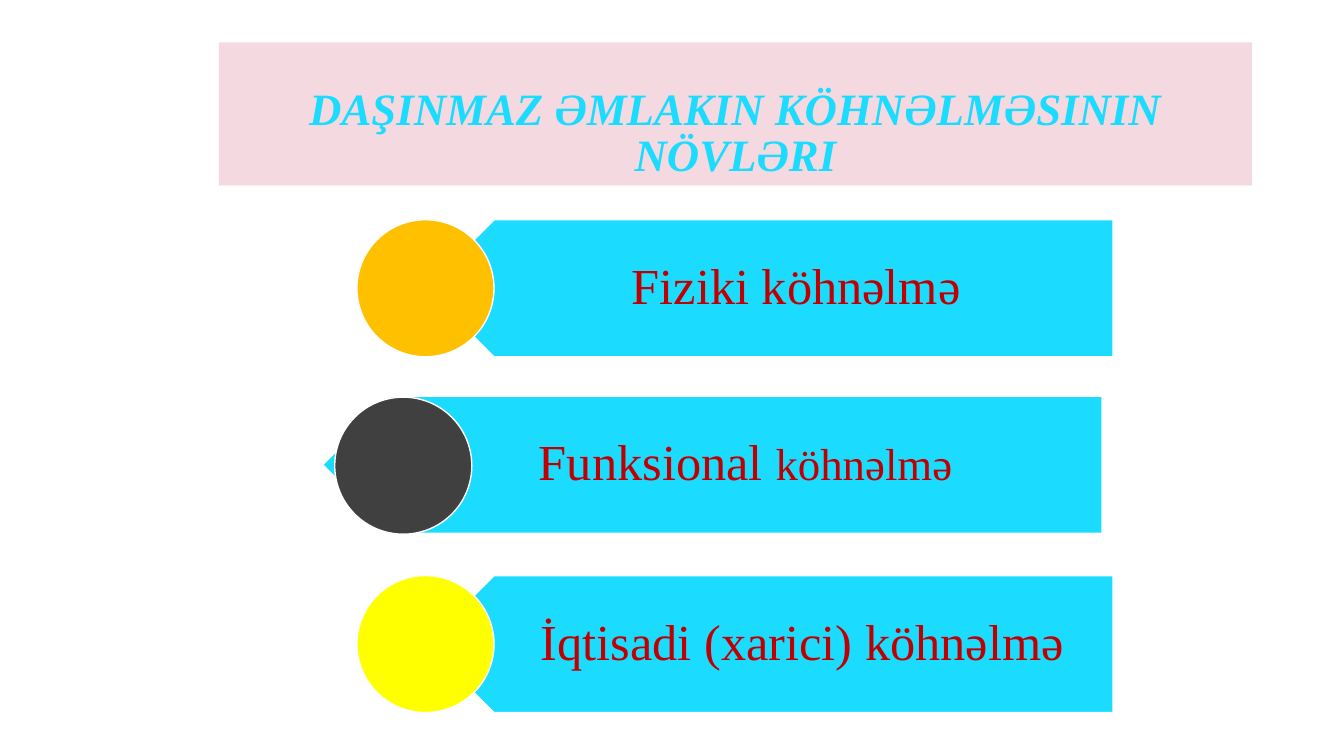
from pptx import Presentation
from pptx.dml.color import RGBColor
from pptx.enum.shapes import MSO_SHAPE
from pptx.enum.text import MSO_ANCHOR, PP_ALIGN
from pptx.util import Inches, Pt

PINK = RGBColor(0xF4, 0xD9, 0xE1)
CYAN = RGBColor(0x1B, 0xDC, 0xFF)
RED = RGBColor(0xC0, 0x00, 0x00)
WHITE = RGBColor(0xFF, 0xFF, 0xFF)
AMBER = RGBColor(0xFF, 0xC0, 0x00)
GREY = RGBColor(0x40, 0x40, 0x40)
YELLOW = RGBColor(0xFF, 0xFF, 0x00)
FONT = "Times New Roman"
ROW_HEIGHT = 1.36
TEXT_OFFSET = 0.34

prs = Presentation()
prs.slide_width = Inches(13.33)
prs.slide_height = Inches(7.5)
slide = prs.slides.add_slide(prs.slide_layouts[6])


def add_filled(kind, left, top, width, height, color):
    shape = slide.shapes.add_shape(
        kind, Inches(left), Inches(top), Inches(width), Inches(height))
    shape.shadow.inherit = False
    shape.fill.solid()
    shape.fill.fore_color.rgb = color
    shape.line.color.rgb = WHITE
    shape.line.width = Pt(1)
    return shape


def add_run(paragraph, text, size, color):
    run = paragraph.add_run()
    run.text = text
    run.font.name = FONT
    run.font.size = Pt(size)
    run.font.color.rgb = color
    return run


# Title band
title = add_filled(MSO_SHAPE.RECTANGLE, 2.17, 0.42, 10.25, 1.42, PINK)
title.line.fill.background()
title.text_frame.word_wrap = True
title.text_frame.vertical_anchor = MSO_ANCHOR.BOTTOM
heading = title.text_frame.paragraphs[0]
heading.alignment = PP_ALIGN.CENTER
heading.line_spacing = 0.85
heading_run = add_run(heading, "DAŞINMAZ ƏMLAKIN KÖHNƏLMƏSININ NÖVLƏRI", 32, CYAN)
heading_run.font.bold = True
heading_run.font.italic = True

# Kinds of depreciation: arrow left, top and width, circle left and top, colour, text
kinds = [
    (4.22, 2.18, 6.82, 3.54, 2.18, AMBER, [("Fiziki köhnəlmə ", 36)]),
    (3.2, 3.93, 7.73, 3.32, 3.94, GREY, [("Funksional ", 36), ("köhnəlmə", 32)]),
    (4.22, 5.71, 6.82, 3.54, 5.71, YELLOW, [("İqtisadi (xarici) köhnəlmə", 36)]),
]
for left, top, width, circle_left, circle_top, color, words in kinds:
    arrow = add_filled(MSO_SHAPE.PENTAGON, left, top, width, ROW_HEIGHT, CYAN)
    arrow.rotation = 180

    label = slide.shapes.add_textbox(
        Inches(left + TEXT_OFFSET), Inches(top),
        Inches(width - TEXT_OFFSET), Inches(ROW_HEIGHT))
    frame = label.text_frame
    frame.word_wrap = True
    frame.vertical_anchor = MSO_ANCHOR.MIDDLE
    frame.margin_left = Inches(0.6)
    frame.margin_right = Inches(0.28)
    frame.margin_top = frame.margin_bottom = Inches(0.15)
    name = frame.paragraphs[0]
    name.alignment = PP_ALIGN.CENTER
    name.line_spacing = 0.9
    for text, size in words:
        add_run(name, text, size, RED)

    add_filled(MSO_SHAPE.OVAL, circle_left, circle_top, ROW_HEIGHT, ROW_HEIGHT, color)

prs.save("out.pptx")
